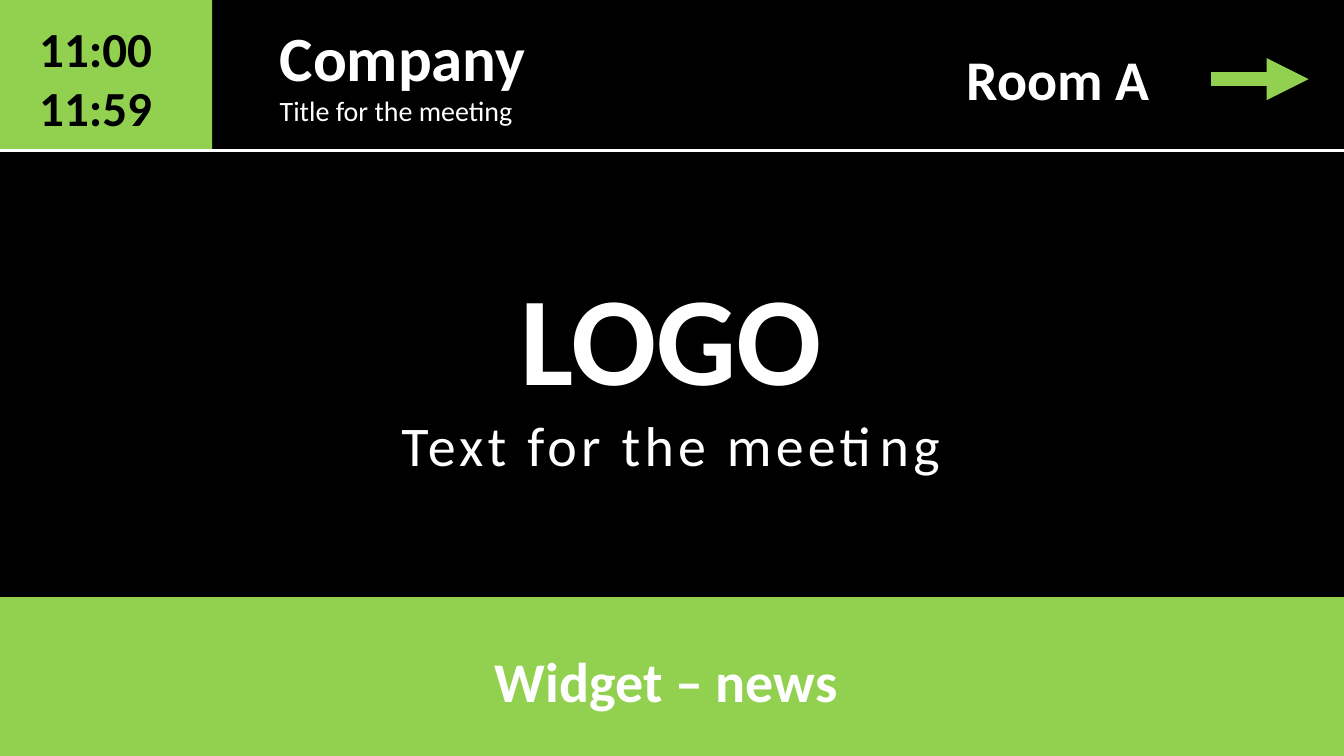
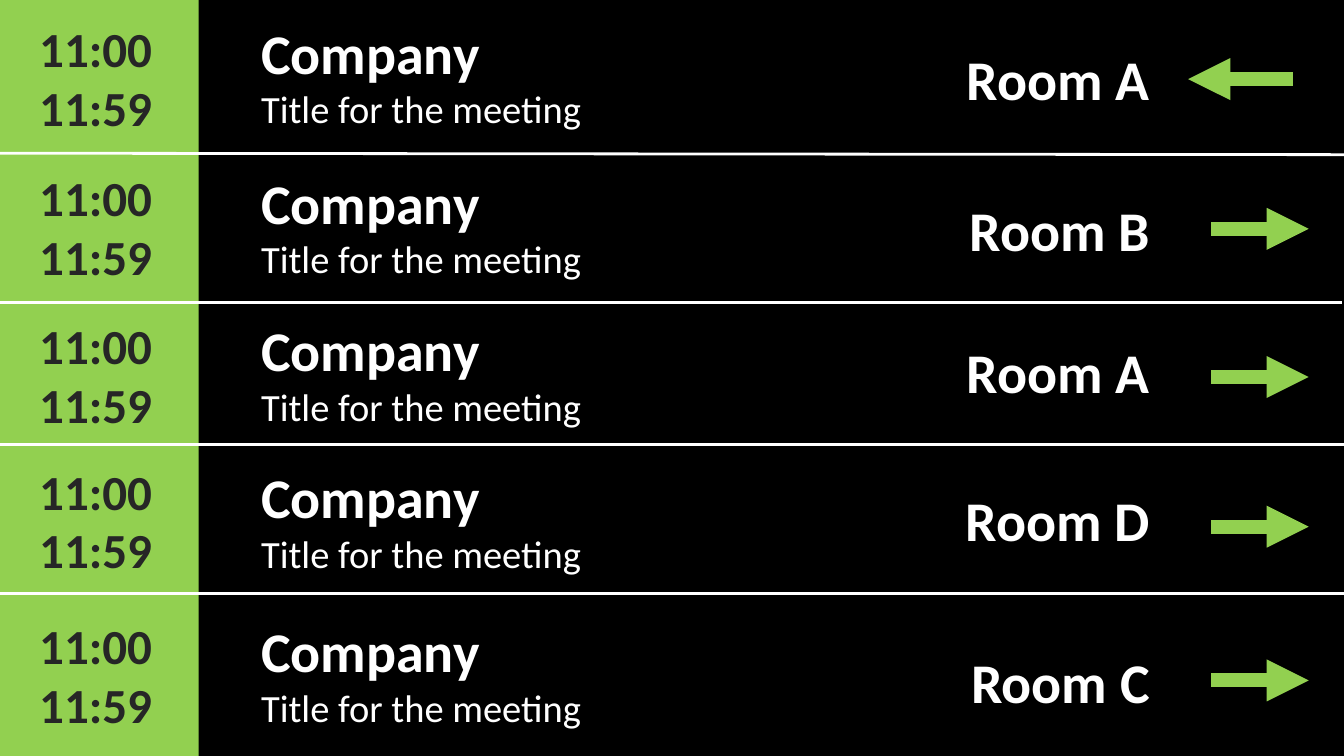
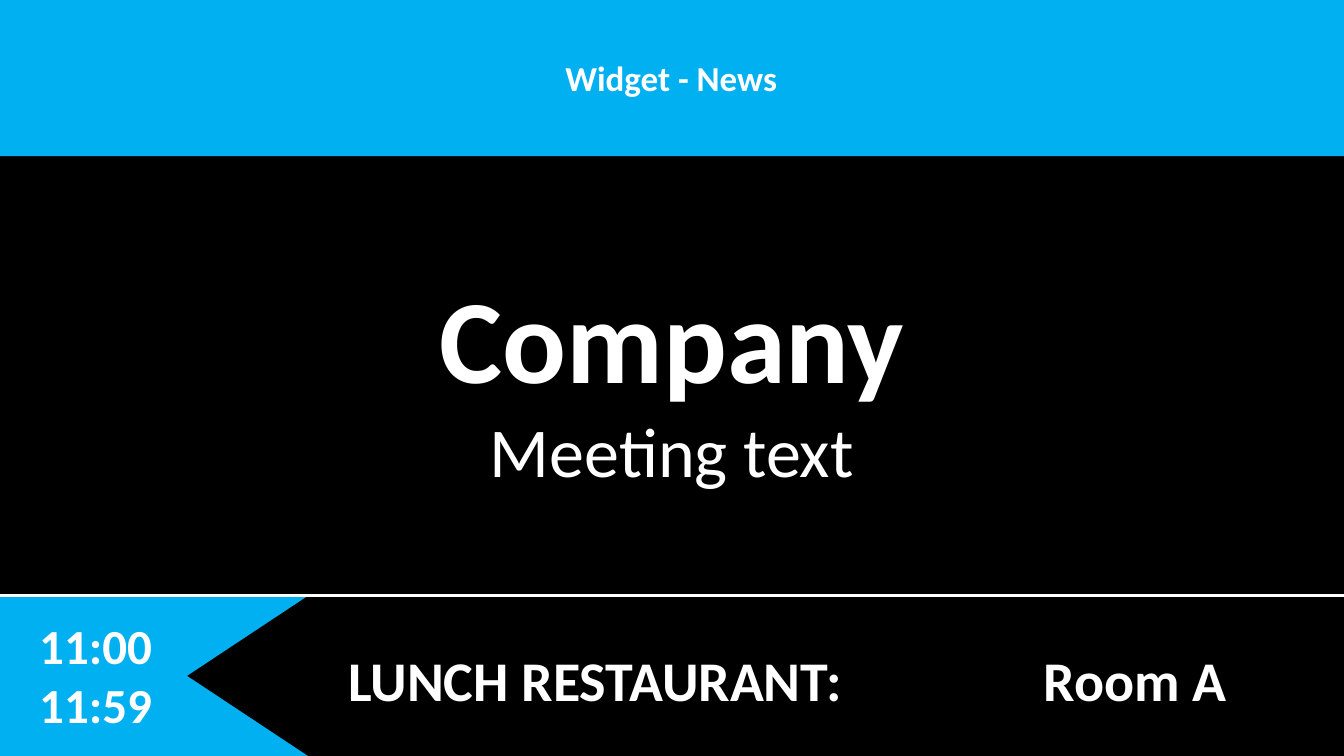
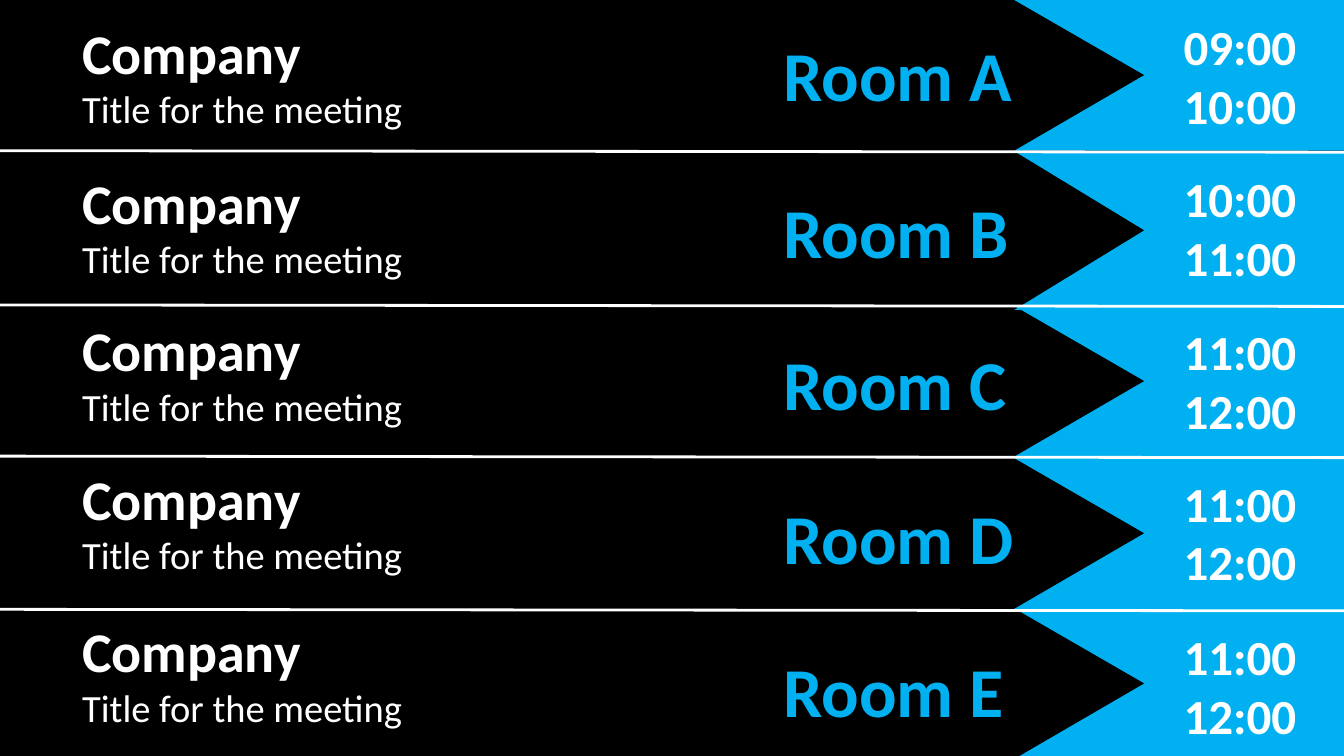
from dataclasses import dataclass

from lxml import etree
from pptx import Presentation
from pptx.dml.color import RGBColor
from pptx.enum.shapes import MSO_CONNECTOR, MSO_SHAPE
from pptx.enum.text import MSO_AUTO_SIZE, PP_ALIGN
from pptx.oxml.ns import qn
from pptx.util import Pt

PX = 9144  # EMU in one px: 100 px to the inch
WIDTH, HEIGHT = 2666, 1500
FONT = "Calibri"

BLACK = RGBColor(0x00, 0x00, 0x00)
WHITE = RGBColor(0xFF, 0xFF, 0xFF)
CHARCOAL = RGBColor(0x26, 0x26, 0x26)
GREEN = RGBColor(0x92, 0xD0, 0x50)
BLUE = RGBColor(0x00, 0xB0, 0xF0)

MEETING = "Title for the meeting"


@dataclass
class Row:
    """One meeting: the row's top, then the tops of its parts within the row."""
    top: int
    title: int
    time: int
    room: int
    name: str
    times: tuple = ("11:00", "11:59")
    arrow: int = 0


GREEN_ROWS = [
    Row(0, 31, 32, 83, "Room A", arrow=157),
    Row(304, 25, 24, 79, "Room B", arrow=150),
    Row(600, 21, 21, 65, "Room A", arrow=148),
    Row(882, 31, 28, 76, "Room D", arrow=163),
    Row(1178, 40, 39, 101, "Room C", arrow=172),
]
BLUE_ROWS = [
    Row(0, 31, 28, 57, "Room A", ("09:00", "10:00")),
    Row(300, 29, 30, 69, "Room B", ("10:00", "11:00")),
    Row(607, 14, 27, 63, "Room C", ("11:00", "12:00")),
    Row(909, 7, 25, 68, "Room D", ("11:00", "12:00")),
    Row(1207, 11, 31, 72, "Room E", ("11:00", "12:00")),
]


# Shared parts

def add_page(deck):
    page = deck.slides.add_slide(deck.slide_layouts[6])
    page.background.fill.solid()
    page.background.fill.fore_color.rgb = BLACK
    return page


def add_text(page, box, paragraphs, color=WHITE, align=PP_ALIGN.LEFT):
    """Each paragraph is a list of (text, size, bold) spans, one to a line."""
    frame = page.shapes.add_textbox(*(value * PX for value in box)).text_frame
    frame.word_wrap = True
    frame.auto_size = MSO_AUTO_SIZE.SHAPE_TO_FIT_TEXT
    for index, spans in enumerate(paragraphs):
        para = frame.add_paragraph() if index else frame.paragraphs[0]
        para.alignment = align
        para.font.name = FONT
        para.font.color.rgb = color
        para.font.size, para.font.bold = Pt(spans[0][1]), spans[0][2]
        for number, (text, size, bold) in enumerate(spans):
            if number:
                para.add_line_break()
            span = para.add_run()
            span.text = text
            if number:
                span.font.size, span.font.bold = Pt(size), bold
    return frame


def paint(shape, color):
    shape.shadow.inherit = False
    shape.fill.solid()
    shape.fill.fore_color.rgb = color
    shape.line.fill.background()


def add_band(page, box, color):
    paint(page.shapes.add_shape(MSO_SHAPE.RECTANGLE, *(value * PX for value in box)), color)


def add_notched_band(page, outer, inner, notch, top, height, color):
    """A band with a pointed notch cut into its inner end."""
    bottom = top + height
    builder = page.shapes.build_freeform(outer, top, scale=PX)
    builder.add_line_segments(
        [(inner, top), (notch, top + height // 2), (inner, bottom), (outer, bottom)])
    paint(builder.convert_to_shape(), color)


def add_line(page, start, end, color=WHITE, weight=4):
    line = page.shapes.add_connector(
        MSO_CONNECTOR.STRAIGHT, *(value * PX for value in start + end))
    line.line.color.rgb = color
    line.line.width = Pt(weight)
    etree.SubElement(line._element.spPr, qn("a:effectLst"))
    return line


def add_arrow(page, start, end, y):
    arrow = add_line(page, (start, y), (end, y), GREEN, 20)
    etree.SubElement(arrow.line._get_or_add_ln(), qn("a:tailEnd"), type="triangle")


def add_times(page, left, top, times, color=WHITE, width=290):
    add_text(page, (left, top, width, 246), [[(time, 70, True)] for time in times], color)


def add_title(page, left, top, name_size=80, title_size=55, height=237):
    add_text(page, (left, top, 1348, height),
             [[("Company", name_size, True), (MEETING, title_size, False)]])


def add_room(page, left, top, width, name):
    add_text(page, (left, top, width, 145), [[(name, 80, True)]], align=PP_ALIGN.RIGHT)


def add_centred(page, box, *lines):
    return add_text(page, box, [[line] for line in lines], align=PP_ALIGN.CENTER)


# Slides

def green_welcome(deck):
    page = add_page(deck)
    # Centre
    frame = add_centred(page, (-2, 509, 2666, 448),
                        ("LOGO", 180, True), ("Text for the meeting", 80, False))
    frame.paragraphs[1].runs[0]._r.get_or_add_rPr().set("spc", "600")
    # News band
    add_band(page, (-6, 1184, 2672, 340), GREEN)
    add_centred(page, (-6, 1277, 2681, 145), ("Widget – news ", 80, True))
    add_line(page, (-2, 1182), (2675, 1182), BLACK, 2.75)
    # Meeting header
    add_band(page, (0, 0, 421, 301), GREEN)
    add_title(page, 545, 31, 90, 40, 229)
    add_times(page, 68, 32, ("11:00", "11:59"), BLACK)
    add_line(page, (-2, 299), (2675, 299))
    add_arrow(page, 2403, 2596, 157)
    add_room(page, 1620, 83, 671, "Room A")


def green_schedule(deck):
    page = add_page(deck)
    add_band(page, (0, 0, 394, HEIGHT), GREEN)
    for row in GREEN_ROWS:
        add_title(page, 508, row.top + row.title)
        add_times(page, 68, row.top + row.time, row.times, CHARCOAL)
        add_room(page, 1620, row.top + row.room, 671, row.name)
        # The first room lies to the left
        start, end = (2403, 2596) if row.top else (2564, 2357)
        add_arrow(page, start, end, row.top + row.arrow)
    # Row dividers
    for left, right, y, drop in ((-7, 2755, 304, 3), (-2, 2663, 600, 0),
                                 (-10, 2711, 882, 0), (-2, 2711, 1178, 0)):
        add_line(page, (left, y), (right, y + drop))


def blue_welcome(deck):
    page = add_page(deck)
    # News band
    add_band(page, (-6, -6, 2672, 316), BLUE)
    add_centred(page, (-3, 108, 2669, 94), ("Widget - News", 50, True))
    # Centre
    add_centred(page, (0, 520, 2666, 464),
                ("Company", 170, True), ("Meeting text", 100, False))
    # Lunch footer
    add_notched_band(page, -2, 611, 371, 1182, 318, BLUE)
    add_times(page, 68, 1217, ("11:00", "11:59"))
    add_room(page, 1476, 1275, 967, "Room A")
    add_text(page, (681, 1275, 1436, 145), [[("LUNCH RESTAURANT:", 80, True)]])
    add_line(page, (-2, 1182), (2675, 1182))


def blue_schedule(deck):
    page = add_page(deck)
    for row in BLUE_ROWS:
        height = 315 if row.top == 300 else 299
        add_notched_band(page, 2671, 2012, 2270, row.top, height, BLUE)
        add_times(page, 2338, row.top + row.time, row.times, width=316)
        add_text(page, (1544, row.top + row.room, 659, 178), [[(row.name, 100, True)]], BLUE)
        add_title(page, 153, row.top + row.title)
    # Row dividers, slightly sloping
    for y in (299, 605, 905, 1209):
        add_line(page, (0, y), (2671, y + 3))


def main():
    deck = Presentation()
    deck.slide_width, deck.slide_height = WIDTH * PX, HEIGHT * PX
    for build in (green_welcome, green_schedule, blue_welcome, blue_schedule):
        build(deck)
    deck.save("out.pptx")


if __name__ == "__main__":
    main()
